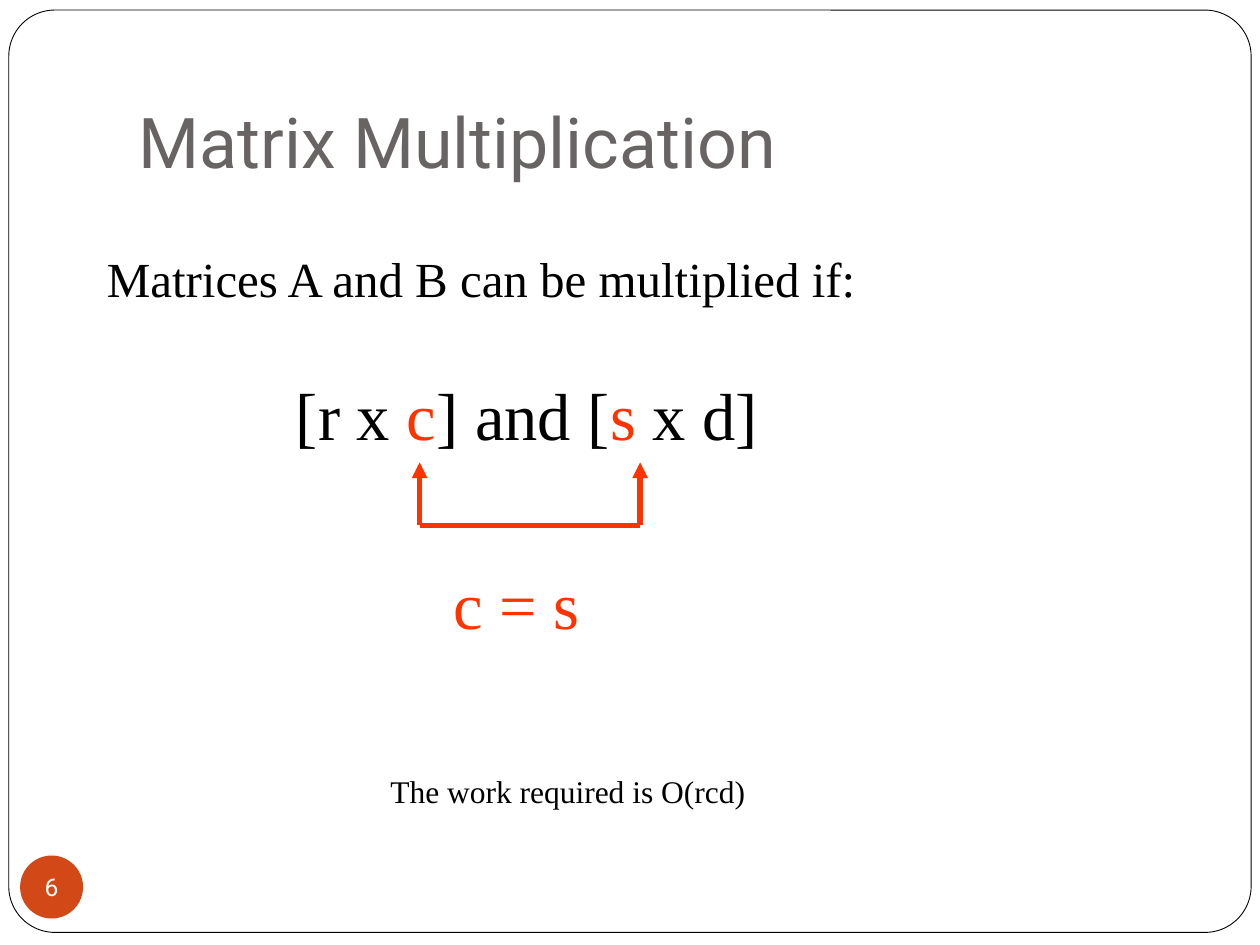
import pptx
import pptx.util
import pptx.dml.color
import pptx.enum.shapes
import pptx.enum.text
import pptx.oxml.ns
import lxml.etree

Inches, Pt = pptx.util.Inches, pptx.util.Pt
SHAPE = pptx.enum.shapes.MSO_SHAPE
ALIGN = pptx.enum.text.PP_ALIGN
ANCHOR = pptx.enum.text.MSO_ANCHOR
qn = pptx.oxml.ns.qn

COLORS = {"black": "000000", "white": "FFFFFF", "title": "696464",
          "badge": "D34817", "accent": "FF3300"}
SERIF, SANS = "Times New Roman", "Roboto"

TITLE = "Matrix Multiplication"
SLIDE_NUMBER = "6"
# box (left, top, width, height), size, runs (text, color)
TEXTS = [
    ((0.75, 1.92, 6.67, 0.57), 28,
     [("Matrices A and B can be multiplied if:", "black")]),
    ((2.25, 2.92, 4.06, 0.73), 38,
     [("[r x ", "black"), ("c", "accent"), ("] and [", "black"),
      ("s", "accent"), (" x d]", "black")]),
    ((3.5, 4.42, 1.33, 0.73), 38, [("c = s", "accent")]),
    ((3, 6.08, 4.32, 0.51), 18, [("The work required is O(rcd)", "black")]),
]
C_X, S_X = 3.33, 5.08
ARROW_TOP, BAR_Y = 3.67, 4.17


def rgb(name):
    return pptx.dml.color.RGBColor.from_string(COLORS[name])


def write(tf, runs, size, font=SERIF, align=ALIGN.LEFT, anchor=ANCHOR.TOP,
          margins=(0.1, 0.05, 0.1, 0.05), wrap=True):
    """Fill a text frame with one paragraph of (text, color) runs."""
    tf.word_wrap = wrap
    tf.auto_size = pptx.enum.text.MSO_AUTO_SIZE.NONE
    tf.vertical_anchor = anchor
    tf.margin_left, tf.margin_top, tf.margin_right, tf.margin_bottom = map(Inches, margins)
    p = tf.paragraphs[0]
    p.alignment = align
    for text, color in runs:
        r = p.add_run()
        r.text = text
        r.font.size, r.font.name = Pt(size), font
        r.font.color.rgb = rgb(color)


def add_shape(s, kind, box, fill, line=None):
    sp = s.shapes.add_shape(kind, *map(Inches, box))
    sp.shadow.inherit = False
    sp.fill.solid()
    sp.fill.fore_color.rgb = rgb(fill)
    if line:
        sp.line.color.rgb = rgb(line)
        sp.line.width = Pt(0.5)
    else:
        sp.line.fill.background()
    return sp


def add_line(group, start, end, arrow=False):
    line = group.shapes.add_connector(pptx.enum.shapes.MSO_CONNECTOR.STRAIGHT,
                                      *map(Inches, start + end))
    line.line.color.rgb = rgb("accent")
    line.line.width = Pt(3)
    if arrow:
        lxml.etree.SubElement(line.line._get_or_add_ln(), qn("a:tailEnd"), type="triangle")
    lxml.etree.SubElement(line._element.spPr, qn("a:effectLst"))


def main():
    prs = pptx.Presentation()
    prs.slide_width, prs.slide_height = Inches(10), Inches(7.5)
    s = prs.slides.add_slide(prs.slide_layouts[5])

    frame = add_shape(s, SHAPE.ROUNDED_RECTANGLE, (0.07, 0.08, 9.86, 7.32), "white", "black")
    frame.adjustments[0] = 0.05
    title = s.shapes.title
    frame._element.addnext(title._element)
    title.left, title.top, title.width, title.height = map(Inches, (1, 0.3, 8.5, 1.25))
    write(title.text_frame, [(TITLE, "title")], 40, font=SANS, anchor=ANCHOR.BOTTOM,
          margins=(0.1, 0.05, 0.1, 0.1))

    badge = add_shape(s, SHAPE.OVAL, (0.16, 6.79, 0.5, 0.5), "badge")
    write(badge.text_frame, [(SLIDE_NUMBER, "white")], 14, font=SANS, align=ALIGN.CENTER,
          anchor=ANCHOR.MIDDLE, margins=(0, 0, 0, 0), wrap=False)

    bracket = s.shapes.add_group_shape()
    for x in (C_X, S_X):
        add_line(bracket, (x, BAR_Y), (x, ARROW_TOP), arrow=True)
    add_line(bracket, (C_X, BAR_Y), (S_X, BAR_Y))

    for box, size, runs in TEXTS:
        write(s.shapes.add_textbox(*map(Inches, box)).text_frame, runs, size)

    prs.save("out.pptx")


if __name__ == "__main__":
    main()
